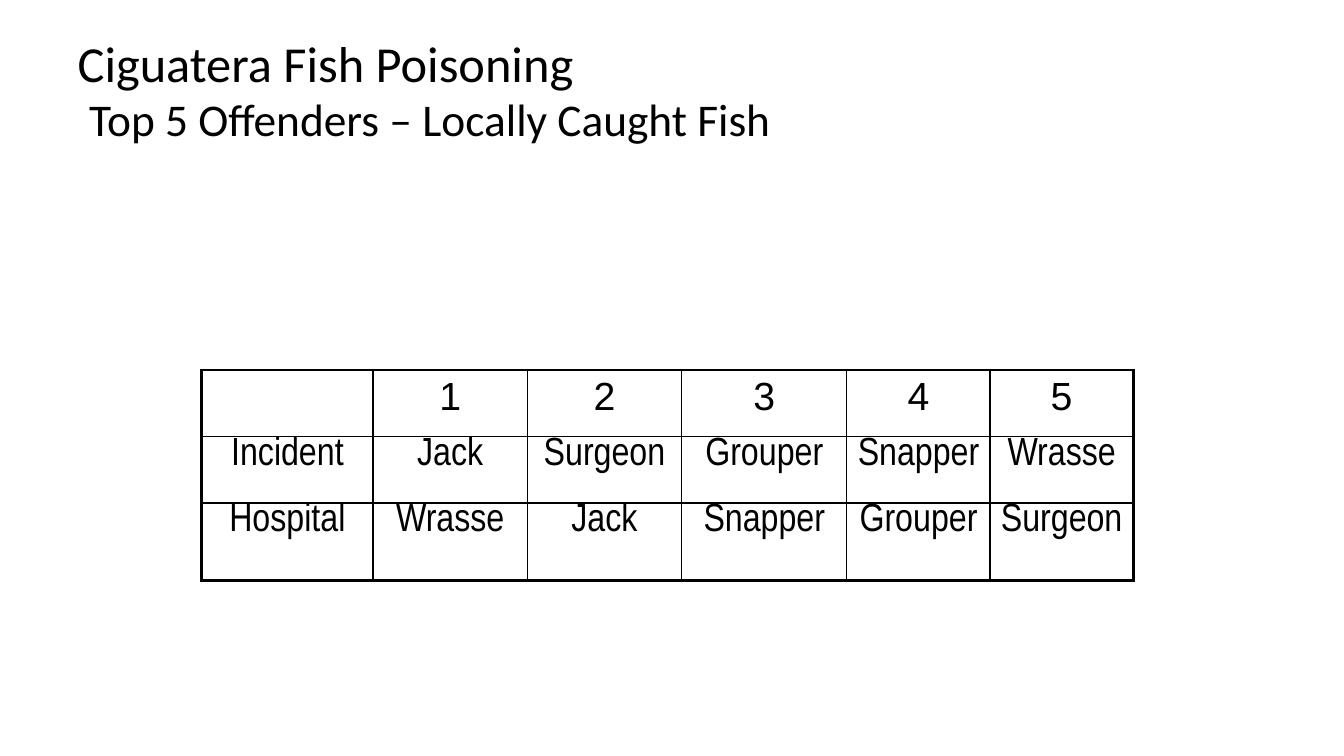
from lxml.etree import SubElement
from pptx import Presentation
from pptx.dml.color import RGBColor as RGB
from pptx.enum.text import MSO_ANCHOR as ANCHOR, MSO_AUTO_SIZE as AUTO, PP_ALIGN as ALIGN
from pptx.oxml.ns import qn
from pptx.util import Inches, Pt

COLORS = {"text": "000000", "line": "000000"}
COLS = [1.7, 1.53, 1.53, 1.64, 1.42, 1.42]
HEIGHTS = [0.66, 0.66, 0.77]
ROWS = [
    ["", "1", "2", "3", "4", "5"],
    ["Incident", "Jack", "Surgeon", "Grouper", "Snapper", "Wrasse"],
    ["Hospital", "Wrasse", "Jack", "Snapper", "Grouper", "Surgeon"],
]


class Deck:
    """Holds the style and the current slide, and adds elements to it."""

    def __init__(self):
        self.prs = Presentation()
        self.prs.slide_width = Inches(13.33)
        self.prs.slide_height = Inches(7.5)
        self.s = self.prs.slides.add_slide(self.prs.slide_layouts[5])

    def run(self, p, text, size, font):
        r = p.add_run()
        r.text = text
        r.font.size = Pt(size)
        r.font.name = font
        r.font.color.rgb = RGB.from_string(COLORS["text"])

    def title(self, heading, subheading):
        sp = self.s.shapes.title
        sp.left, sp.top, sp.width, sp.height = map(Inches, (0.67, 0.3, 12, 1.25))
        tf = sp.text_frame
        tf.word_wrap = True
        tf.auto_size = AUTO.NONE
        tf.vertical_anchor = ANCHOR.MIDDLE
        p = tf.paragraphs[0]
        p.alignment = ALIGN.LEFT
        p.line_spacing = 0.9
        self.run(p, heading, 36, "Calibri")
        p.add_line_break()
        self.run(p, " ", 36, "Calibri")
        self.run(p, subheading, 32.4, "Calibri")

    def borders(self, cell, widths):
        tc_pr = cell._tc.get_or_add_tcPr()
        for side, width in widths.items():
            ln = SubElement(tc_pr, qn(f"a:ln{side}"), w=str(Pt(width)))
            fill = SubElement(ln, qn("a:solidFill"))
            SubElement(fill, qn("a:srgbClr"), val=COLORS["line"])

    def table(self, left, top, rows, cols, heights):
        frame = self.s.shapes.add_table(
            len(rows), len(cols), Inches(left), Inches(top),
            Inches(sum(cols)), Inches(sum(heights)))
        tbl = frame.table
        tbl.first_row = tbl.horz_banding = False
        for col, width in zip(tbl.columns, cols):
            col.width = Inches(width)
        for i, (row, height) in enumerate(zip(rows, heights)):
            tbl.rows[i].height = Inches(height)
            for j, text in enumerate(row):
                cell = tbl.cell(i, j)
                edges = {"L": j == 0, "R": j == len(cols) - 1,
                         "T": i == 0, "B": i == len(rows) - 1}
                self.borders(cell, {k: 2.25 if outer else 1 for k, outer in edges.items()})
                cell.fill.background()
                cell.margin_left = cell.margin_right = Inches(0.05)
                cell.margin_top = Inches(0 if i else 0.05)
                p = cell.text_frame.paragraphs[0]
                p.alignment = ALIGN.CENTER
                if text:
                    self.run(p, text, 28, "Arial Narrow" if i else "Arial")


def main():
    deck = Deck()
    deck.title("Ciguatera Fish Poisoning", "Top 5 Offenders – Locally Caught Fish")
    deck.table(2, 3.67, ROWS, COLS, HEIGHTS)
    deck.prs.save("out.pptx")


if __name__ == "__main__":
    main()
